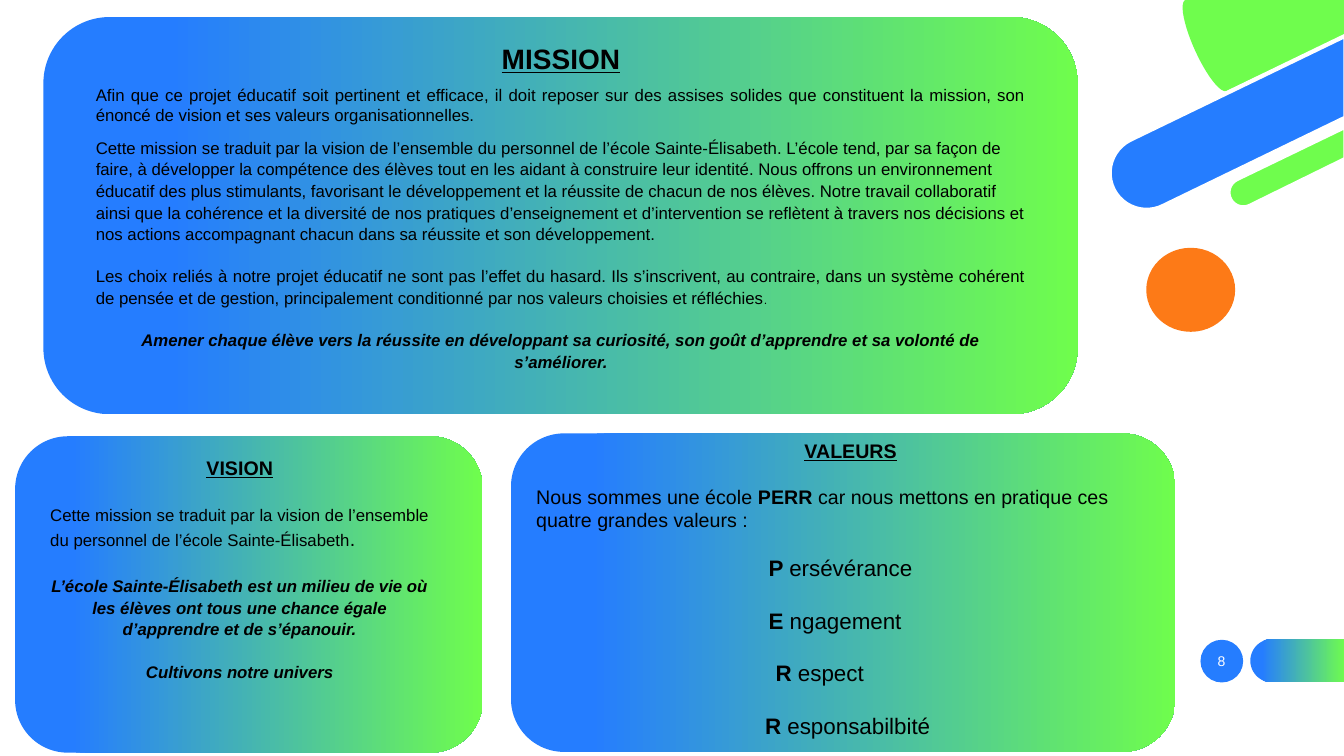
from math import cos, pi, sin
from lxml.etree import SubElement
from pptx import Presentation
from pptx.dml.color import RGBColor
from pptx.enum.shapes import MSO_SHAPE as SHAPE
from pptx.enum.text import MSO_ANCHOR as ANCHOR, MSO_AUTO_SIZE as AUTO, PP_ALIGN as ALIGN
from pptx.oxml.ns import qn
from pptx.util import Pt

BLUE, GREEN, ORANGE, WHITE, BLACK = "257DFF", "6FFD4D", "FD7A17", "FFFFFF", "000000"
rgb = RGBColor.from_string


def paint(shape, *colors):
    """Fill with one colour, or with a left-to-right gradient of two."""
    if len(colors) == 1:
        shape.fill.solid()
        shape.fill.fore_color.rgb = rgb(colors[0])
    else:
        shape.fill.gradient()
        shape.fill.gradient_angle = 0
        for stop, color, position in zip(shape.fill.gradient_stops, colors, (0.12, 1)):
            stop.color.rgb = rgb(color)
            stop.position = position
    shape.line.fill.background()
    shape.shadow.inherit = False


def write(frame, text, size=12, bold=False, italic=False, underline=False, color=BLACK,
          font="Arial", align=ALIGN.LEFT, before=0, after=0, spacing=1.0, indent=0, join=False):
    """Add a paragraph, or with join a further run of the last paragraph."""
    if join:
        para = frame.paragraphs[-1]
    else:
        para = frame.add_paragraph() if frame.text else frame.paragraphs[0]
        para.alignment, para.line_spacing = align, spacing
        para.space_before, para.space_after = Pt(before), Pt(after)
        properties = para._p.get_or_add_pPr()
        properties.set("marL", str(Pt(indent)))
        properties.set("indent", "0")
        SubElement(properties, qn("a:buNone"))
    span = para.add_run()
    span.text = text
    span.font.name, span.font.size = font, Pt(size)
    span.font.bold, span.font.italic, span.font.underline = bold, italic, underline
    span.font.color.rgb = rgb(color)


deck = Presentation()
deck.slide_width, deck.slide_height = Pt(960), Pt(540)
page = deck.slides.add_slide(deck.slide_layouts.get_by_name("Two Content"))
shapes = page.shapes

# Bars bleed off the right edge; the left end is an arc whose depth is bulge × its chord
RIGHT, STEPS = 961, 24
for left, top, dx, dy, right_top, right_bottom, bulge, rim, colors in [
    (908.6, 456.5, 0, 31, 456.5, 487.5, 0.5, 0, [BLUE, GREEN]),
    (846.7, 0, 29.5, 65, 0, 24.5, 0.12, 0, [GREEN]),
    (883.4, 128, 9.4, 19, 90.5, 113.5, 0.5, 3, [GREEN]),
    (807, 100, 24, 47, 25.5, 84, 0.5, 3, [BLUE]),
]:
    outline = [(RIGHT, right_top)]
    for step in range(STEPS + 1):
        angle = pi * step / STEPS
        along, out = (1 - cos(angle)) / 2, bulge * sin(angle)
        outline.append((left + dx * along - dy * out, top + dy * along + dx * out))
    outline.append((RIGHT, right_bottom))
    points = [(Pt(x), Pt(y)) for x, y in outline]
    builder = shapes.build_freeform(*points[0])
    builder.add_line_segments(points[1:], close=True)
    bar = builder.convert_to_shape()
    paint(bar, *colors)
    if rim:
        bar.line.color.rgb = rgb(WHITE)
        bar.line.width = Pt(rim)

for kind, bounds, colors in [
    (SHAPE.OVAL, (857.5, 457, 30.5, 30.5), [BLUE]),
    (SHAPE.ROUNDED_RECTANGLE, (31, 12.2, 738.7, 283.7), [BLUE, GREEN]),
    (SHAPE.ROUNDED_RECTANGLE, (365, 309.6, 474.5, 227.5), [BLUE, GREEN]),
    (SHAPE.ROUNDED_RECTANGLE, (10.8, 311.6, 334, 226), [BLUE, GREEN]),
    (SHAPE.OVAL, (818.8, 177, 63.5, 60), [ORANGE]),
]:
    paint(shapes.add_shape(kind, *map(Pt, bounds)), *colors)

title, mission, values = page.placeholders
vision, number = [shapes.add_textbox(0, 0, 0, 0) for _ in range(2)]
for box, bounds in [
    (title, (61.2, 25.9, 679, 31)),
    (mission, (61.2, 56.9, 679, 238)),
    (vision, (28.8, 321.1, 285, 216)),
    (values, (375.8, 309.6, 463.7, 227.5)),
    (number, (851, 458, 43.2, 28.8)),
]:
    box.left, box.top, box.width, box.height = map(Pt, bounds)
    box.text_frame.word_wrap = True
    box.text_frame.auto_size = AUTO.NONE
    box.text_frame.vertical_anchor = ANCHOR.MIDDLE if box is number else ANCHOR.TOP
    shapes.element.append(box.element)  # bring in front of the cards

write(number.text_frame, "8", size=10, color=WHITE, align=ALIGN.CENTER)
write(title.text_frame, "MISSION", size=20, bold=True, underline=True, align=ALIGN.CENTER)

frame = mission.text_frame
write(frame, "Afin que ce projet éducatif soit pertinent et efficace, il doit reposer sur des assises "
      "solides que constituent la mission, son énoncé de vision et ses valeurs organisationnelles.",
      align=ALIGN.JUSTIFY, after=8)
write(frame, "Cette mission se traduit par la vision de l’ensemble du personnel de l’école "
      "Sainte-Élisabeth. L’école tend, par sa façon de faire, à développer la compétence des élèves "
      "tout en les aidant à construire leur identité. Nous offrons un environnement éducatif des plus "
      "stimulants, favorisant le développement et la réussite de chacun de nos élèves. Notre travail "
      "collaboratif ainsi que la cohérence et la diversité de nos pratiques d’enseignement et "
      "d’intervention se reflètent à travers nos décisions et nos actions accompagnant chacun dans sa "
      "réussite et son développement.", spacing=1.07)
write(frame, "Les choix reliés à notre projet éducatif ne sont pas l’effet du hasard. Ils "
      "s’inscrivent, au contraire, dans un système cohérent de pensée et de gestion, principalement "
      "conditionné par nos valeurs choisies et réfléchies",
      align=ALIGN.JUSTIFY, spacing=1.07, before=14.8)
write(frame, ".", font="Comic Neue", join=True)
write(frame, "Amener chaque élève vers la réussite en développant sa curiosité, son goût d’apprendre "
      "et sa volonté de s’améliorer.", bold=True, italic=True, align=ALIGN.CENTER, spacing=1.07,
      before=14.8)

frame = vision.text_frame
write(frame, "VISION", size=14, bold=True, underline=True, align=ALIGN.CENTER, spacing=1.07)
write(frame, "Cette mission se traduit par la vision de l’ensemble du personnel de l’école "
      "Sainte-Élisabeth", align=ALIGN.JUSTIFY, spacing=1.07, before=17.2)
write(frame, ".", size=14, join=True)
for text, gap in [
    ("L’école Sainte-Élisabeth est un milieu de vie où les élèves ont tous une chance égale "
     "d’apprendre et de s’épanouir.", 17.2),
    ("Cultivons notre univers", 14.8),
]:
    write(frame, text, bold=True, italic=True, align=ALIGN.CENTER, spacing=1.07, before=gap)

frame = values.text_frame
write(frame, "VALEURS", size=14, bold=True, underline=True, align=ALIGN.CENTER)
write(frame, "Nous sommes une école ", size=14, before=16.1)
write(frame, "PERR ", size=14, bold=True, join=True)
write(frame, "car nous mettons en pratique ces quatre grandes valeurs :", size=14, join=True)
for initial, rest, indent, gap in [
    ("P ", "ersévérance", 166, 16.1),
    ("E ", "ngagement", 166, 18.4),
    ("R ", "espect", 171, 18.4),
    ("R ", "esponsabilbité", 163.5, 18.4),
]:
    write(frame, initial, size=16, bold=True, indent=indent, before=gap)
    write(frame, rest, size=16, join=True)

deck.save("out.pptx")
